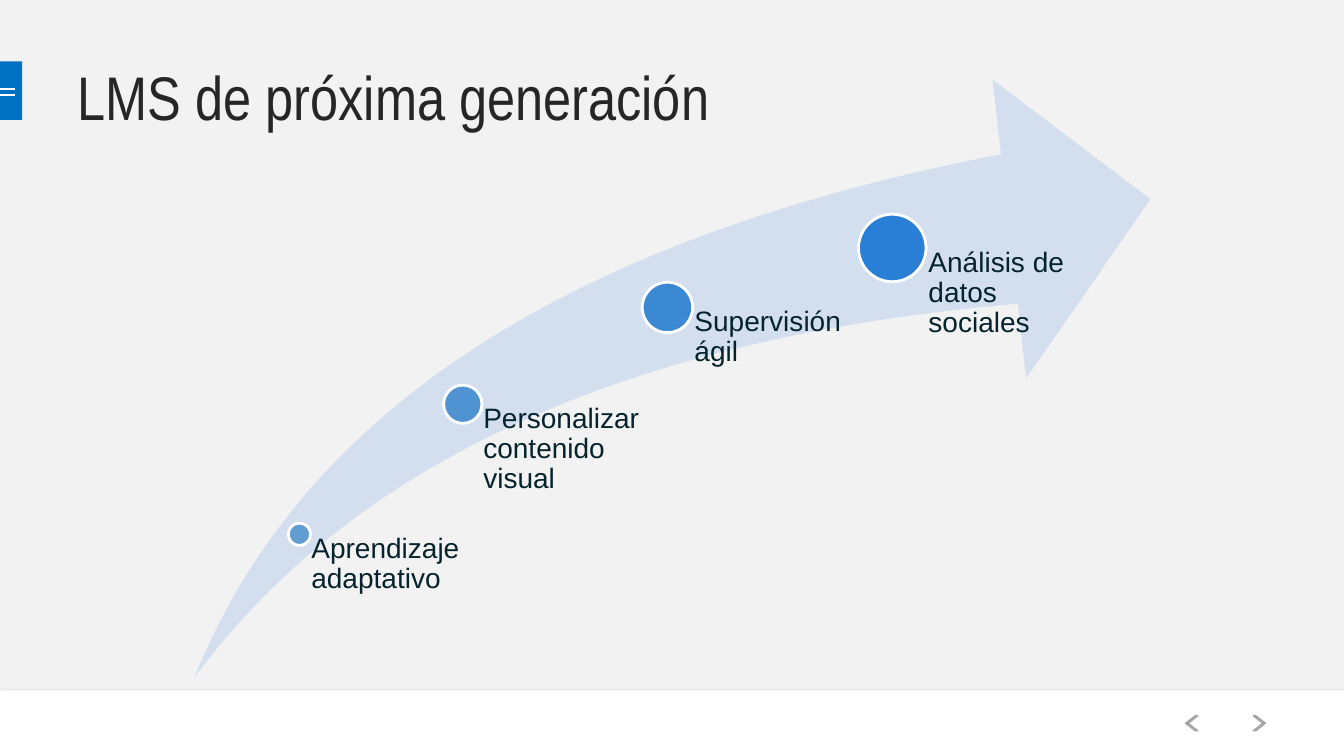
import pptx
import pptx.util
import pptx.dml.color
import pptx.enum.shapes
import pptx.enum.text
import lxml.etree
import pptx.oxml.ns

TITLE = "LMS de próxima generación"
STAGES = [
    ("Aprendizaje adaptativo", 2.97, 5.3, 0.22, 1.62, "stage1"),
    ("Personalizar contenido visual", 4.59, 4.01, 0.38, 1.99, "stage2"),
    ("Supervisión ágil", 6.62, 3.05, 0.5, 1.99, "stage3"),
    ("Análisis de datos sociales", 8.85, 2.46, 0.67, 1.99, "stage4"),
]
TAB_LINES = [0.88, 0.94]
CHEVRONS = [(11.76, 180), (12.43, 0)]
SWOOSH = (1.93, 0.79, 9.48, 5.93)
LABEL_BOTTOM = 6.71
INSET_RATIO = 0.535
COLORS = {
    "background": "F2F2F2", "tab": "0070C0", "white": "FFFFFF",
    "title": "262626", "swoosh": "D3DFEE", "label": "05232C",
    "chevron": "2E7974", "chevron_line": "A6A6A6", "shadow": "808080",
    "stage1": "629DD1", "stage2": "5093D2", "stage3": "3C89D3", "stage4": "297FD5",
}

Inches = pptx.util.Inches
Pt = pptx.util.Pt
SHAPE = pptx.enum.shapes.MSO_SHAPE
ANCHOR = pptx.enum.text.MSO_ANCHOR
qn = pptx.oxml.ns.qn


def rgb(name):
    return pptx.dml.color.RGBColor.from_string(COLORS[name])


def add_shape(kind, box, fill, line=None, width=1):
    s = slide.shapes.add_shape(kind, *map(Inches, box))
    s.shadow.inherit = False
    s.fill.solid()
    s.fill.fore_color.rgb = rgb(fill)
    if line:
        s.line.color.rgb = rgb(line)
        s.line.width = Pt(width)
    else:
        s.line.fill.background()
    return s


def add_text(text, box, size, font, color, inset, anchor):
    tf = slide.shapes.add_textbox(*map(Inches, box)).text_frame
    tf.word_wrap = True
    tf.vertical_anchor = anchor
    tf.margin_left = Inches(inset)
    tf.margin_top = tf.margin_right = tf.margin_bottom = 0
    p = tf.paragraphs[0]
    r = p.add_run()
    r.text = text
    r.font.size = Pt(size)
    r.font.name = font
    r.font.color.rgb = rgb(color)
    return p


def add_shadow(s, color, alpha, blur, distance, angle):
    effects = s._element.spPr.find(qn("a:effectLst"))
    shadow = lxml.etree.SubElement(
        effects, qn("a:outerShdw"), blurRad=str(Pt(blur)), dist=str(Pt(distance)),
        dir=str(angle * 60000), algn="t", rotWithShape="0")
    fill = lxml.etree.SubElement(shadow, qn("a:srgbClr"), val=COLORS[color])
    lxml.etree.SubElement(fill, qn("a:alpha"), val=str(alpha * 1000))


prs = pptx.Presentation()
prs.slide_width = Inches(13.33)
prs.slide_height = Inches(7.5)
slide = prs.slides.add_slide(prs.slide_layouts[6])
slide.background.fill.solid()
slide.background.fill.fore_color.rgb = rgb("background")

add_shape(SHAPE.RECTANGLE, (0, 0.61, 0.22, 0.58), "tab")
for y in TAB_LINES:
    c = slide.shapes.add_connector(
        pptx.enum.shapes.MSO_CONNECTOR.STRAIGHT, 0, Inches(y), Inches(0.15), Inches(y))
    c.line.color.rgb = rgb("white")
    c.line.width = Pt(1.5)
    lxml.etree.SubElement(c._element.spPr, qn("a:effectLst"))

footer = add_shape(SHAPE.RECTANGLE, (0, 6.85, 13.33, 0.68), "white")
add_shadow(footer, "shadow", 35, 3.1, 1.8, 90)
for x, rotation in CHEVRONS:
    s = add_shape(SHAPE.CHEVRON, (x, 7.1, 0.12, 0.15), "chevron", "chevron_line")
    s.adjustments[0] = 0.793
    s.rotation = rotation

add_text(TITLE, (0.67, 0.64, 11.11, 0.62), 44, "Arial Narrow", "title", 0.1, ANCHOR.MIDDLE)

swoosh = add_shape(SHAPE.SWOOSH_ARROW, SWOOSH, "swoosh")
swoosh.adjustments[0] = 0.25
swoosh.adjustments[1] = 0.25

for text, x, y, size, width, color in STAGES:
    add_shape(SHAPE.OVAL, (x - size / 2, y - size / 2, size, size), color, "white", 2)
    p = add_text(text, (x, y, width, LABEL_BOTTOM - y), 20, "Arial", "label",
                 size * INSET_RATIO, ANCHOR.TOP)
    p.line_spacing = 0.9

prs.save("out.pptx")
